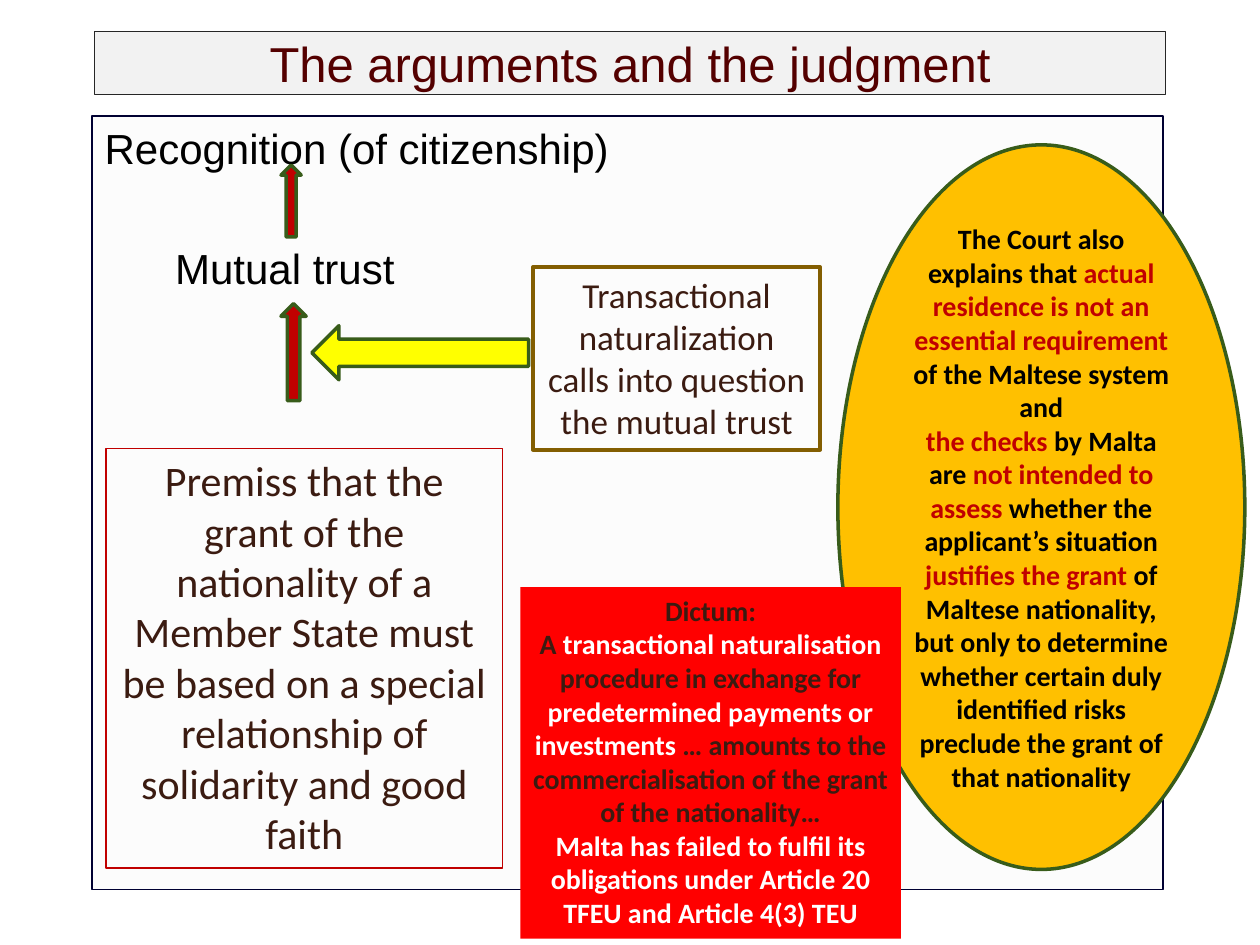
from dataclasses import dataclass
from typing import Optional

from lxml.etree import SubElement
from pptx import Presentation
from pptx.dml.color import RGBColor
from pptx.enum.shapes import MSO_SHAPE
from pptx.enum.text import MSO_ANCHOR, MSO_AUTO_SIZE, PP_ALIGN
from pptx.oxml.ns import qn
from pptx.util import Inches, Pt


@dataclass(frozen=True)
class Theme:
    title: str = "540000"
    ink: str = "000000"
    brown: str = "3B1B11"
    white: str = "FFFFFF"
    crimson: str = "C00000"
    red: str = "FF0000"
    gold: str = "FFC000"
    yellow: str = "FFFF00"
    green: str = "385C1A"
    ochre: str = "835E01"
    grey: str = "F2F2F2"
    edge: str = "262626"
    navy: str = "000032"
    head: str = "Arial"
    text: str = "Calibri"
    huge: int = 28
    large: int = 24
    mid: int = 20
    small: int = 16


T = Theme()
Box = tuple[float, float, float, float]
Run = tuple[str, str]  # wording, colour


@dataclass(frozen=True)
class Panel:
    box: Box
    kind: MSO_SHAPE
    size: int
    paras: list[list[Run]]
    fill: Optional[str] = None
    line: Optional[str] = None
    width: float = 2
    bold: bool = False
    anchor: MSO_ANCHOR = MSO_ANCHOR.TOP


@dataclass(frozen=True)
class Arrow:
    box: Box
    turn: int
    fill: str


def place(shape, box: Box) -> None:
    shape.left, shape.top, shape.width, shape.height = map(Inches, box)


def paint(shape, fill: Optional[str], line: Optional[str], width: float) -> None:
    if fill:
        shape.fill.solid()
        shape.fill.fore_color.rgb = RGBColor.from_string(fill)
    else:
        shape.fill.background()
    if line:
        shape.line.color.rgb = RGBColor.from_string(line)
        shape.line.width = Pt(width)
    else:
        shape.line.fill.background()


def write(frame, paras: list[list[Run]], name: str, size: int,
          align: PP_ALIGN, bold: bool = False) -> None:
    frame.word_wrap = True
    frame.auto_size = MSO_AUTO_SIZE.NONE
    for i, runs in enumerate(paras):
        para = frame.add_paragraph() if i else frame.paragraphs[0]
        para.alignment = align
        para.font.name, para.font.size, para.font.bold = name, Pt(size), bold
        for text, color in runs:
            run = para.add_run()
            run.text = text
            run.font.color.rgb = RGBColor.from_string(color)


def add_panel(slide, panel: Panel) -> None:
    shape = slide.shapes.add_shape(panel.kind, *map(Inches, panel.box))
    shape.shadow.inherit = False
    paint(shape, panel.fill, panel.line, panel.width)
    shape.text_frame.vertical_anchor = panel.anchor
    write(shape.text_frame, panel.paras, T.text, panel.size,
          PP_ALIGN.CENTER, panel.bold)


def add_arrow(slide, arrow: Arrow) -> None:
    shape = slide.shapes.add_shape(MSO_SHAPE.DOWN_ARROW, *map(Inches, arrow.box))
    shape.shadow.inherit = False
    shape.rotation = arrow.turn
    paint(shape, arrow.fill, T.green, 2)


def add_title(slide) -> None:
    title = slide.shapes.title
    place(title, (0.75, 0.25, 8.5, 0.5))
    paint(title, T.grey, T.edge, 0.75)
    title.text_frame.vertical_anchor = MSO_ANCHOR.MIDDLE
    write(title.text_frame, [[("The arguments and the judgment", T.title)]],
          T.head, T.huge, PP_ALIGN.CENTER)


def add_body(slide) -> None:
    body = slide.placeholders[1]
    place(body, (0.73, 0.92, 8.5, 6.14))
    paint(body, T.grey, T.navy, 0.75)
    tint = body.fill._xPr.find(qn("a:solidFill"))[0]
    SubElement(tint, qn("a:alpha"), val="20000")
    write(body.text_frame, [[("Recognition (of citizenship)", T.ink)],
                            [("Mutual trust", T.ink)]],
          T.head, T.large, PP_ALIGN.LEFT)
    # No bullets; the second line is indented and set lower
    for para, indent, gap in zip(body.text_frame.paragraphs, (0, 0.56), (0, 40)):
        para.space_before = Pt(gap)
        props = para._p.get_or_add_pPr()
        props.set("marL", str(Inches(indent)))
        props.set("indent", "0")
        props.insert_element_before(props.makeelement(qn("a:buNone")),
                                    "a:tabLst", "a:defRPr", "a:extLst")


ARROWS = [
    Arrow((2.23, 1.31, 0.16, 0.57), 180, T.crimson),
    Arrow((2.23, 2.41, 0.2, 0.77), 180, T.crimson),
    Arrow((3.12, 1.94, 0.43, 1.72), 90, T.yellow),
]

PREMISS = Panel(
    (0.84, 3.56, 3.15, 3.33), MSO_SHAPE.RECTANGLE, T.large,
    [[("Premiss that the grant of the nationality of a Member State must be "
       "based on a special relationship of solidarity and good faith", T.brown)]],
    line=T.crimson, width=0.75)

TRADE = Panel(
    (4.23, 2.12, 2.28, 1.45), MSO_SHAPE.RECTANGLE, T.mid,
    [[("Transactional naturalization calls into question the mutual trust",
       T.brown)]],
    line=T.ochre)

COURT = Panel(
    (6.65, 1.15, 3.23, 5.75), MSO_SHAPE.OVAL, T.small,
    [[("The Court also explains that ", T.ink),
      ("actual residence is not an essential requirement ", T.crimson),
      ("of the Maltese system and", T.ink)],
     [("the checks ", T.crimson), ("by Malta", T.ink)],
     [("are ", T.ink), ("not intended to assess ", T.crimson),
      ("whether the applicant’s situation ", T.ink),
      ("justifies the grant ", T.crimson),
      ("of Maltese nationality, but only to determine whether certain duly "
       "identified risks preclude the grant of that nationality", T.ink)]],
    fill=T.gold, line=T.green, bold=True, anchor=MSO_ANCHOR.MIDDLE)

DICTUM = Panel(
    (4.13, 4.66, 3.02, 2.79), MSO_SHAPE.RECTANGLE, T.small,
    [[("Dictum:", T.brown)],
     [("A ", T.brown), ("transactional naturalisation ", T.white),
      ("procedure in exchange for ", T.brown),
      ("predetermined payments or investments ", T.white),
      ("… amounts to the commercialisation of the grant of the nationality…",
       T.brown)],
     [("Malta has failed to fulfil its obligations under Article 20 TFEU "
       "and Article 4(3) TEU", T.white)]],
    fill=T.red, bold=True)


def main() -> None:
    deck = Presentation()
    deck.slide_width, deck.slide_height = Inches(10), Inches(7.5)
    slide = deck.slides.add_slide(deck.slide_layouts[1])
    # Heading and chain of recognition
    add_title(slide)
    add_body(slide)
    for arrow in ARROWS:
        add_arrow(slide, arrow)
    # Arguments and findings, back to front
    for panel in (PREMISS, TRADE, COURT, DICTUM):
        add_panel(slide, panel)
    deck.save("out.pptx")


if __name__ == "__main__":
    main()
